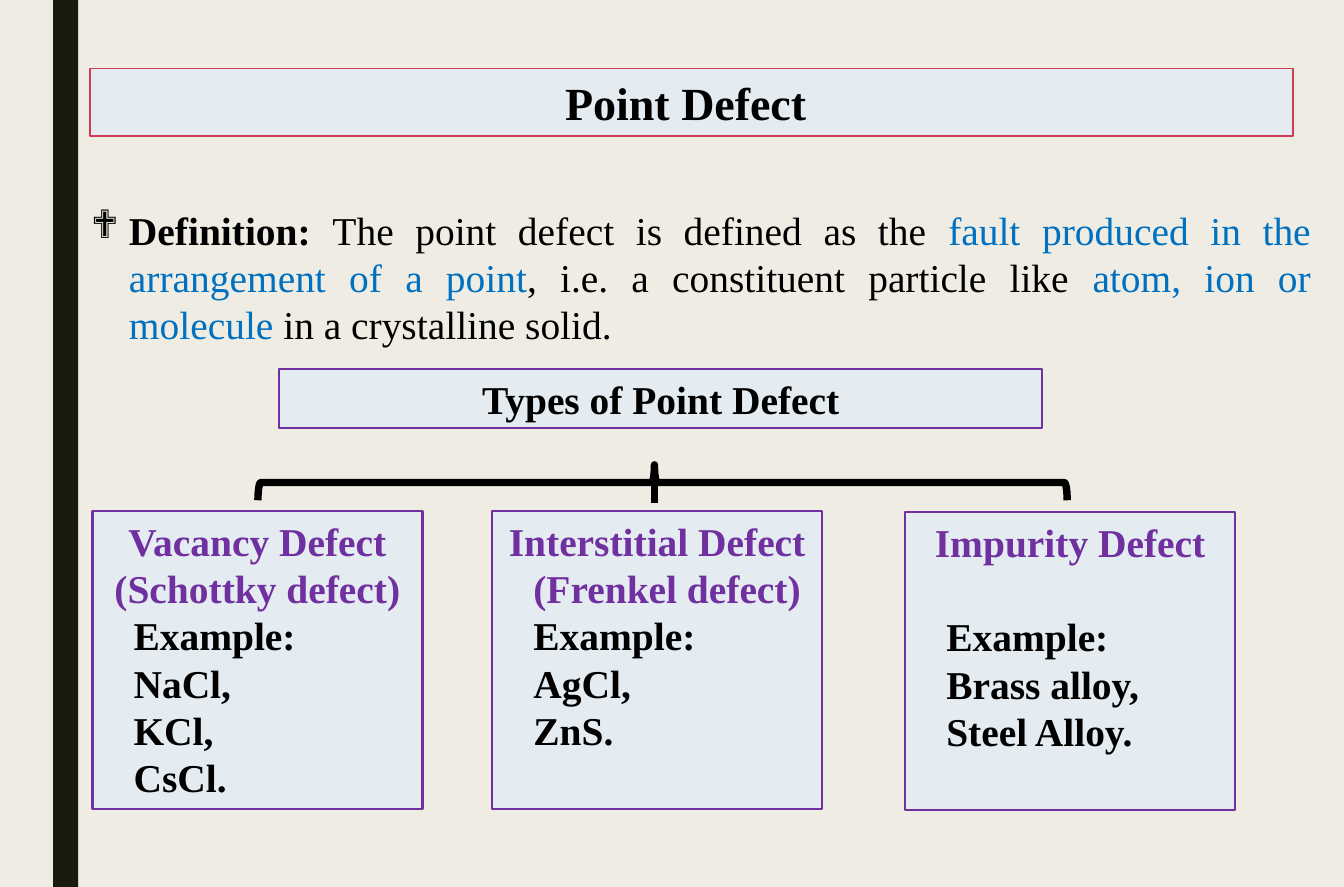
import pptx
import pptx.dml.color
import pptx.enum.shapes
import pptx.enum.text
import pptx.oxml.ns
import pptx.util
from lxml import etree

COLORS = {
    "paper": "EFEDE3",
    "bar": "191B0E",
    "panel": "E4ECF1",
    "red": "D13B56",
    "purple": "7030A0",
    "blue": "0070C0",
    "black": "000000",
}
ALIGN = pptx.enum.text.PP_ALIGN
ANCHOR = pptx.enum.text.MSO_ANCHOR
SHAPE = pptx.enum.shapes.MSO_SHAPE


def rgb(name):
    return pptx.dml.color.RGBColor.from_string(COLORS[name])


class Slide:
    """Places styled elements on a grid of 100 columns by 100 rows."""

    font = "Times New Roman"
    line_height = pptx.util.Pt(28.8)

    def __init__(self, deck, layout):
        self.deck = deck
        self.page = deck.slides.add_slide(deck.slide_layouts[layout])
        fill = self.page.background.fill
        fill.solid()
        fill.fore_color.rgb = rgb("paper")

    def x(self, columns):
        return round(self.deck.slide_width * columns / 100)

    def y(self, rows):
        return round(self.deck.slide_height * rows / 100)

    def place(self, box, left, top, width, height):
        spot = {"left": self.x(left), "top": self.y(top),
                "width": self.x(width), "height": self.y(height)}
        for name, value in spot.items():
            setattr(box, name, value)

    def paint(self, box, fill=None, line=None, weight=1.5):
        if fill:
            box.fill.solid()
            box.fill.fore_color.rgb = rgb(fill)
        else:
            box.fill.background()
        if line:
            box.line.color.rgb = rgb(line)
            box.line.width = pptx.util.Pt(weight)
        else:
            box.line.fill.background()

    def frame(self, box, anchor):
        settings = {"word_wrap": True, "vertical_anchor": anchor,
                    "auto_size": pptx.enum.text.MSO_AUTO_SIZE.NONE}
        for name, value in settings.items():
            setattr(box.text_frame, name, value)

    def add_spans(self, para, spans, align=ALIGN.LEFT, size=24, gap=0):
        """Fill a paragraph with (text, color, bold) spans."""
        spacing = {"alignment": align, "space_before": self.line_height * gap,
                   "space_after": 0}
        if size == 24:
            spacing["line_spacing"] = self.line_height
        for name, value in spacing.items():
            setattr(para, name, value)
        for text, color, bold in spans:
            span = para.add_run()
            span.text = text
            style = {"name": self.font, "size": pptx.util.Pt(size), "bold": bold}
            for name, value in style.items():
                setattr(span.font, name, value)
            span.font.color.rgb = rgb(color)

    def indent(self, para, margin, first=0):
        props = para._p.get_or_add_pPr()
        props.set("marL", str(pptx.util.Inches(margin)))
        props.set("indent", str(pptx.util.Inches(first)))
        return props

    def title(self, text, *spot):
        box = self.page.shapes.title
        self.place(box, *spot)
        self.paint(box, "panel", "red", 0.75)
        self.frame(box, ANCHOR.MIDDLE)
        self.add_spans(box.text_frame.paragraphs[0], [(text, "black", True)],
                       ALIGN.CENTER, 28)

    def bullet(self, spans, mark, *spot):
        box = self.page.placeholders[1]
        self.place(box, *spot)
        self.frame(box, ANCHOR.TOP)
        para = box.text_frame.paragraphs[0]
        self.add_spans(para, spans, ALIGN.JUSTIFY)
        props = self.indent(para, 0.32, -0.32)
        for tag, key, value in (("a:buFont", "typeface", "Wingdings"),
                                ("a:buChar", "char", mark)):
            etree.SubElement(props, pptx.oxml.ns.qn(tag)).set(key, value)

    def shape(self, kind, spot, **look):
        box = self.page.shapes.add_shape(kind, 0, 0, 0, 0)
        self.place(box, *spot)
        self.paint(box, **look)
        box.shadow.inherit = False
        return box

    def panel(self, heading, color, spot, lines=(), anchor=ANCHOR.MIDDLE):
        """Box with a centred heading and indented (text, color, gap) lines."""
        box = self.shape(SHAPE.RECTANGLE, spot, fill="panel", line="purple")
        self.frame(box, anchor)
        self.add_spans(box.text_frame.paragraphs[0], [(heading, color, True)],
                       ALIGN.CENTER)
        for text, line_color, gap in lines:
            para = box.text_frame.add_paragraph()
            self.add_spans(para, [(text, line_color, True)], gap=gap)
            self.indent(para, 0.25)

    def brace(self, *spot):
        box = self.shape(SHAPE.RIGHT_BRACE, spot, line="black", weight=4.5)
        box.rotation = 270
        box.adjustments[0] = 0.08
        box.adjustments[1] = 0.49

    def stem(self, column, top, bottom):
        line = self.page.shapes.add_connector(
            pptx.enum.shapes.MSO_CONNECTOR.STRAIGHT,
            self.x(column), self.y(top), self.x(column), self.y(bottom))
        line.line.color.rgb = rgb("black")
        line.line.width = pptx.util.Pt(4.5)
        etree.SubElement(line._element.spPr, pptx.oxml.ns.qn("a:effectLst"))


def main():
    deck = pptx.Presentation()
    deck.slide_width = pptx.util.Inches(11.36)
    deck.slide_height = pptx.util.Inches(7.5)
    slide = Slide(deck, 1)

    # Side bar, title and definition
    slide.shape(SHAPE.RECTANGLE, (3.96, 0, 1.85, 100), fill="bar")
    slide.title("Point Defect ", 6.69, 7.73, 89.52, 7.6)
    slide.bullet([
        ("Definition: ", "black", True),
        ("The point defect is defined as the ", "black", False),
        ("fault produced in the arrangement of a point", "blue", False),
        (", i.e. a constituent particle like ", "black", False),
        ("atom, ion or molecule", "blue", False),
        (" in a crystalline solid.", "black", False),
    ], "❖", 5.9, 22.53, 92.52, 17.47)

    # Heading of the tree and its branches
    slide.panel("Types of Point Defect", "black", (20.77, 41.6, 56.78, 6.67))
    slide.brace(47.98, 8.8, 2.64, 91.2)
    slide.stem(48.68, 54.53, 56.67)

    # One panel for each type: left, top, heading, subheading, gap, examples
    types = [
        (6.87, 57.6, "Vacancy Defect (Schottky defect)", None, 0,
         ["NaCl,", "KCl,", "CsCl."]),
        (36.62, 57.6, "Interstitial Defect", "(Frenkel defect)", 0,
         ["AgCl,", "ZnS."]),
        (67.34, 57.73, "Impurity Defect", None, 1,
         ["Brass alloy,", "Steel Alloy."]),
    ]
    for left, top, heading, subheading, gap, examples in types:
        lines = [(subheading, "purple", 0)] if subheading else []
        lines.append(("Example:", "black", gap))
        lines += [(example, "black", 0) for example in examples]
        slide.panel(heading, "purple", (left, top, 24.56, 33.6), lines, ANCHOR.TOP)

    deck.save("out.pptx")


if __name__ == "__main__":
    main()
